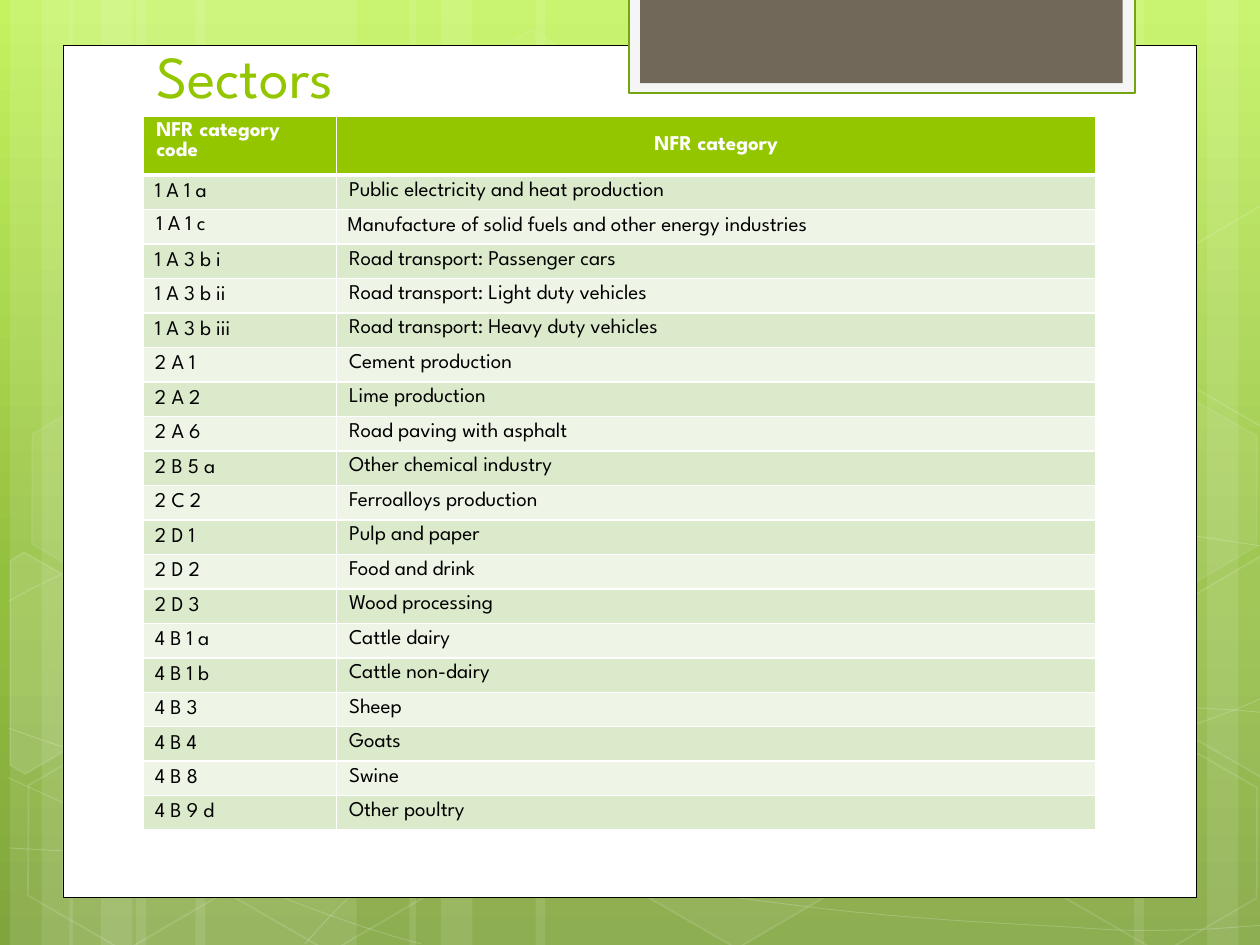
"""Build the slide listing the NFR sectors on a green decorated background."""
import copy
import math

import pptx
import pptx.dml.color
import pptx.enum.shapes
import pptx.enum.text
import pptx.oxml
import pptx.oxml.ns
import pptx.util

Inches, Pt = pptx.util.Inches, pptx.util.Pt
RGBColor = pptx.dml.color.RGBColor
SHAPES = pptx.enum.shapes.MSO_SHAPE
ANCHOR = pptx.enum.text.MSO_ANCHOR
ALIGN = pptx.enum.text.PP_ALIGN
qn = pptx.oxml.ns.qn
NAMESPACE = pptx.oxml.ns.nsdecls("a")

FONT = "League Spartan"
WHITE = RGBColor(0xFF, 0xFF, 0xFF)
BLACK = RGBColor(0x00, 0x00, 0x00)
GREEN = RGBColor(0x94, 0xC6, 0x00)
DARK_GREEN = RGBColor(0x74, 0xA5, 0x10)
BROWN = RGBColor(0x71, 0x68, 0x5A)
PALE_GRAY = RGBColor(0xF5, 0xF5, 0xF5)
BANDS = (RGBColor(0xDC, 0xEA, 0xCC), RGBColor(0xEE, 0xF5, 0xE7))
GRADIENT = (
    (0, RGBColor(0xC3, 0xF3, 0x5F)),
    (0.62, RGBColor(0x93, 0xBF, 0x3F)),
    (1, RGBColor(0x81, 0xA5, 0x3E)),
)

TITLE = "Sectors"
HEADER = ("NFR category\ncode", "NFR category")
SECTORS = (
    ("1 A 1 a", "Public electricity and heat production"),
    ("1 A 1 c", "Manufacture of solid fuels and other energy industries"),
    ("1 A 3 b i", "Road transport: Passenger cars"),
    ("1 A 3 b ii", "Road transport: Light duty vehicles"),
    ("1 A 3 b iii", "Road transport: Heavy duty vehicles"),
    ("2 A 1", "Cement production"), ("2 A 2", "Lime production"),
    ("2 A 6", "Road paving with asphalt"), ("2 B 5 a", "Other chemical industry"),
    ("2 C 2", "Ferroalloys production"), ("2 D 1", "Pulp and paper"),
    ("2 D 2", "Food and drink"), ("2 D 3", "Wood processing"),
    ("4 B 1 a", "Cattle dairy"), ("4 B 1 b", "Cattle non-dairy"), ("4 B 3", "Sheep"),
    ("4 B 4", "Goats"), ("4 B 8", "Swine"), ("4 B 9 d", "Other poultry"),
)
CENTERED_NAME_CODE = "1 A 1 c"
COLUMN_WIDTHS = (1.53, 6.03)
HEADER_HEIGHT, ROW_HEIGHT = 0.47, 5.2 / 19

STRIPES = (
    (1.08, 1.75), (0.08, 0.5), (0.33, 0.83), (1.55, 1.75), (0.55, 0.5), (0.8, 0.83),
    (7.33, 1.75), (9.58, 0.5), (9, 0.83), (4.25, 3.08), (3.25, 0.5), (3.5, 0.83),
)
CURVES = (
    ((0.07, 6.73), (0.61, 6.76), (1.15, 6.79), (1.9, 6.78), (2.65, 6.77), (3.58, 6.75),
     (4.58, 6.65), (5.58, 6.55), (7, 6.36), (7.92, 6.17), (8.83, 5.98), (9.77, 5.68),
     (10.07, 5.51)),
    ((0.07, 4.77), (0.36, 4.61), (0.65, 4.46), (1.21, 4.31), (1.78, 4.16), (2.59, 3.94),
     (3.47, 3.87), (4.36, 3.8), (5.44, 3.79), (6.54, 3.87), (7.64, 3.95), (9.47, 4.26),
     (10.07, 4.34)),
    ((0.06, 6.17), (1.27, 6.72), (2.47, 7.27), (3.34, 7.49)),
    ((0.07, 5.78), (0.38, 5.89), (0.7, 6), (1.28, 6.16), (1.86, 6.31), (2.73, 6.56),
     (3.57, 6.73), (4.4, 6.9), (5.45, 7.08), (6.28, 7.18), (7.11, 7.29), (8, 7.33),
     (8.53, 7.36), (9.05, 7.4), (9.19, 7.38), (9.45, 7.38), (9.71, 7.37), (9.89, 7.35),
     (10.07, 7.34)),
    ((2.42, 7.49), (2.6, 7.29), (2.78, 7.09), (3.02, 6.91), (3.26, 6.73), (3.6, 6.53),
     (3.88, 6.39), (4.16, 6.25), (4.33, 6.19), (4.7, 6.09), (5.06, 5.99), (5.73, 5.85),
     (6.08, 5.78), (6.44, 5.71), (6.49, 5.71), (6.8, 5.69), (7.11, 5.66), (7.6, 5.63),
     (7.94, 5.62), (8.29, 5.61), (8.86, 5.62), (8.86, 5.62), (9.08, 5.62), (9.31, 5.62),
     (9.53, 5.62), (9.71, 5.63), (9.88, 5.64), (9.97, 5.65), (10.06, 5.66), (10.03, 5.65),
     (10.06, 5.66)),
)
HEXAGONS = (
    (3.34, 0.36, 4, 8), (4.97, 5.89, 6, 12), (0.11, 5.91, 0, 12), (0.14, 3.12, 7, 8),
    (1.74, 5.92, 0, 12), (7.53, 4.53, 10, 12), (8.34, 5.93, 0, 12), (8.34, 3.14, 7, 8),
)
HEXAGON_TILT = 30
CUT_HEXAGONS = (
    ((0.36, 5.35), 10,
     ((0.08, 4.45), (0.19, 4.38), (0.96, 4.82), (0.95, 5.7), (0.2, 6.14), (0.08, 6.07))),
    ((9.85, 5.2), 4,
     ((9.26, 4.85), (10.01, 4.41), (10.09, 4.46), (10.09, 6.13), (10.02, 6.17), (9.26, 5.73))),
    ((9.85, 2.41), 0,
     ((9.26, 2.07), (10.01, 1.63), (10.1, 1.68), (10.09, 3.35), (10.02, 3.39), (9.26, 2.95))),
)
PANELS = (
    ((0.5, 0.36, 9, 6.76), WHITE, BLACK, 0.5),
    ((4.99, -0.02, 4.02, 0.76), PALE_GRAY, DARK_GREEN, 1.25),
    ((5.08, -0.02, 3.83, 0.68), BROWN, None, 0),
)


def tint_white(fill, percent):
    if not percent:
        fill.background()
        return
    fill.solid()
    fill.fore_color.rgb = WHITE
    color = fill._xPr.find(qn("a:solidFill"))[0]
    color.append(pptx.oxml.parse_xml(f'<a:alpha {NAMESPACE} val="{percent * 1000}"/>'))


def style_decoration(shape, fill_percent, line_percent, line_width=1):
    shape.shadow.inherit = False
    tint_white(shape.fill, fill_percent)
    tint_white(shape.line.fill, line_percent)
    if line_percent:
        shape.line.width = Pt(line_width)


def add_outline(shapes, points, close):
    points = [(Inches(x), Inches(y)) for x, y in points]
    builder = shapes.build_freeform(*points[0], scale=1.0)
    builder.add_line_segments(points[1:], close=close)
    return builder.convert_to_shape()


def add_curve(shapes, controls):
    curve = add_outline(shapes, controls, False)
    lines = list(curve._element.iter(qn("a:lnTo")))
    for start in range(0, len(lines), 3):
        bezier = pptx.oxml.parse_xml(f"<a:cubicBezTo {NAMESPACE}/>")
        lines[start].addprevious(bezier)
        for line in lines[start:start + 3]:
            bezier.append(line[0])
            line.getparent().remove(line)
    return curve


def turn_back(point, center):
    angle = math.radians(-HEXAGON_TILT)
    x, y = point[0] - center[0], point[1] - center[1]
    return (center[0] + x * math.cos(angle) - y * math.sin(angle),
            center[1] + x * math.sin(angle) + y * math.cos(angle))


def paint_background(slide):
    fill = slide.background.fill
    fill.gradient()
    fill.gradient_angle = 270
    stops = slide.element.find(".//" + qn("a:gsLst"))
    stops.append(copy.deepcopy(stops[0]))
    for stop, (position, color) in zip(fill.gradient_stops, GRADIENT):
        stop.position = position
        stop.color.rgb = color


def add_decorations(shapes):
    for left, width in STRIPES:
        stripe = shapes.add_shape(SHAPES.RECTANGLE, Inches(left), 0, Inches(width), Inches(7.5))
        style_decoration(stripe, 10, 0)
    for controls in CURVES:
        style_decoration(add_curve(shapes, controls), 0, 20, 0.5)
    for left, top, fill_percent, line_percent in HEXAGONS:
        hexagon = shapes.add_shape(SHAPES.HEXAGON, *map(Inches, (left, top, 1.75, 1.52)))
        hexagon.adjustments[0] = 0.285
        hexagon.rotation = HEXAGON_TILT
        style_decoration(hexagon, fill_percent, line_percent)
    for center, fill_percent, corners in CUT_HEXAGONS:
        upright = [turn_back(corner, center) for corner in corners]
        cut_hexagon = add_outline(shapes, upright, True)
        cut_hexagon.rotation = HEXAGON_TILT
        style_decoration(cut_hexagon, fill_percent, 12)
    for box, fill_color, line_color, line_width in PANELS:
        panel = shapes.add_shape(SHAPES.RECTANGLE, *map(Inches, box))
        style_decoration(panel, 0, 0)
        panel.fill.solid()
        panel.fill.fore_color.rgb = fill_color
        if line_color is not None:
            panel.line.color.rgb = line_color
            panel.line.width = Pt(line_width)


def format_runs(paragraph, size, color, bold=False):
    for run in paragraph.runs:
        run.font.name, run.font.size, run.font.bold = FONT, Pt(size), bold
        run.font.color.rgb = color


def place_title(slide):
    title = slide.shapes.title
    title.left, title.top, title.width, title.height = map(Inches, (1.14, -0.32, 7.68, 1.25))
    title.text_frame.text = TITLE
    title.text_frame.vertical_anchor = ANCHOR.BOTTOM
    title.text_frame.paragraphs[0].alignment = ALIGN.LEFT
    format_runs(title.text_frame.paragraphs[0], 34, GREEN)
    slide.shapes._spTree.append(title._element)


def fill_cell(cell, text, fill_color, is_header, is_centered):
    cell.text_frame.text = text
    cell.vertical_anchor = ANCHOR.MIDDLE if is_centered else ANCHOR.TOP
    if is_centered and not is_header:
        cell.margin_left = Inches(0.09)
        cell.margin_top = cell.margin_right = cell.margin_bottom = 0
    for paragraph in cell.text_frame.paragraphs:
        format_runs(paragraph, 12, WHITE if is_header else BLACK, is_header)
        if is_header and is_centered:
            paragraph.alignment = ALIGN.CENTER
    properties = cell._tc.get_or_add_tcPr()
    for side in "LRTB":
        width = Pt(3 if is_header and side == "B" else 1)
        properties.append(pptx.oxml.parse_xml(
            f'<a:ln{side} {NAMESPACE} w="{width}"><a:solidFill>'
            f'<a:srgbClr val="{WHITE}"/></a:solidFill></a:ln{side}>'))
    cell.fill.solid()
    cell.fill.fore_color.rgb = fill_color


def add_sector_table(shapes):
    rows = (HEADER,) + SECTORS
    height = HEADER_HEIGHT + ROW_HEIGHT * len(SECTORS)
    box = map(Inches, (1.14, 0.92, sum(COLUMN_WIDTHS), height))
    table = shapes.add_table(len(rows), 2, *box).table
    for column, width in zip(table.columns, COLUMN_WIDTHS):
        column.width = Inches(width)
    for index, values in enumerate(rows):
        is_header = index == 0
        table.rows[index].height = Inches(HEADER_HEIGHT if is_header else ROW_HEIGHT)
        color = GREEN if is_header else BANDS[(index - 1) % 2]
        centered_column = 1 if is_header or values[0] == CENTERED_NAME_CODE else 0
        for column, text in enumerate(values):
            fill_cell(table.cell(index, column), text, color, is_header,
                      column == centered_column)


presentation = pptx.Presentation()
presentation.slide_width, presentation.slide_height = Inches(10), Inches(7.5)
slide = presentation.slides.add_slide(presentation.slide_layouts[5])
paint_background(slide)
add_decorations(slide.shapes)
place_title(slide)
add_sector_table(slide.shapes)
presentation.save("out.pptx")
